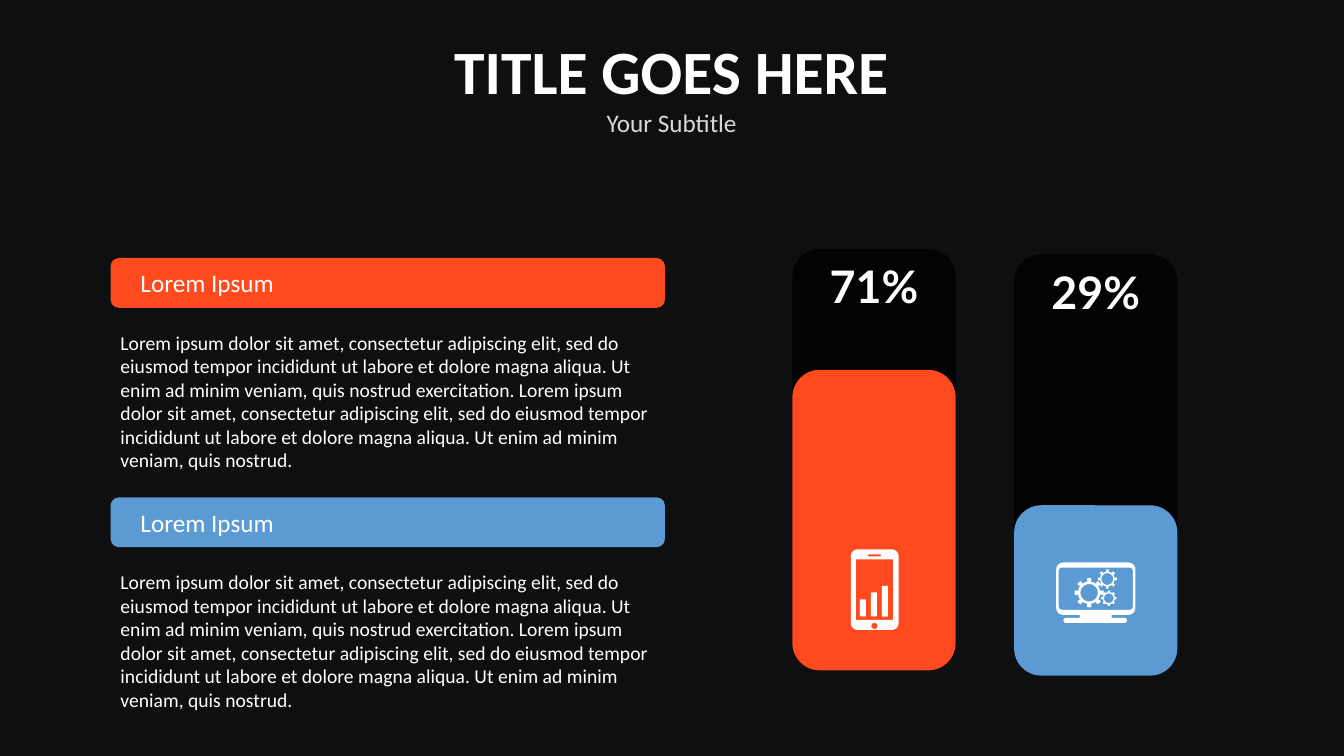
"""Build a dark slide with two text sections and two percentage columns."""
from dataclasses import dataclass
from math import cos, pi, sin

from lxml.etree import SubElement
from pptx import Presentation
from pptx.dml.color import RGBColor
from pptx.enum.shapes import MSO_SHAPE
from pptx.enum.text import MSO_AUTO_SIZE, PP_ALIGN
from pptx.oxml.ns import qn
from pptx.shapes.autoshape import Shape
from pptx.slide import Slide
from pptx.util import Pt

Contour = list[tuple[float, float]]


@dataclass(frozen=True)
class Theme:
    """Colours, fonts and type sizes."""
    back: str = "0E0F11"
    white: str = "FFFFFF"
    grey: str = "D9D9D9"
    track: str = "000000"
    orange: str = "FE4A1E"
    blue: str = "5C9AD3"
    font: str = "Calibri"
    figure_font: str = "Lato"
    title: int = 44
    figure: int = 32
    heading: int = 18
    body: int = 14
    track_alpha: int = 75


@dataclass(frozen=True)
class Box:
    """A rectangle in points."""
    x: float
    y: float
    w: float
    h: float


@dataclass(frozen=True)
class Line:
    """One formatted paragraph."""
    text: str
    size: int
    color: str
    font: str
    bold: bool = False
    align: PP_ALIGN = PP_ALIGN.LEFT


@dataclass(frozen=True)
class Section:
    """A coloured heading with body text."""
    heading: str
    body: str
    color: str


@dataclass(frozen=True)
class Column:
    """A percentage column."""
    label: str
    x: float
    y: float
    level: float
    color: str


@dataclass(frozen=True)
class Gear:
    """A cogwheel by centre and radii."""
    x: float
    y: float
    outer: float
    root: float
    hole: float


T = Theme()
LOREM = ("Lorem ipsum dolor sit amet, consectetur adipiscing elit, sed do eiusmod tempor "
         "incididunt ut labore et dolore magna aliqua. Ut enim ad minim veniam, quis nostrud")
BODY = f"{LOREM} exercitation. {LOREM}."
SECTIONS = [Section("Lorem Ipsum", BODY, color) for color in (T.orange, T.blue)]
SECTION_TOP, SECTION_STEP = 184.3, 171
COLUMNS = [Column("71%", 566, 177.8, 214.6, T.orange),
           Column("29%", 724.4, 181.6, 121.7, T.blue)]
COLUMN_W, COLUMN_H = 116.6, 301
GEARS = [Gear(778, 423.4, 10.4, 8, 6.2), Gear(791, 413.6, 6.8, 5.2, 4.2),
         Gear(792, 427.3, 5.4, 4.4, 3.4)]
CHART_BARS = [12.2, 17.3, 21.9]


def paint(sp: Shape, color: str, alpha: int = 100) -> None:
    """Fill a shape without line or shadow."""
    sp.shadow.inherit = False
    sp.line.fill.background()
    sp.fill.solid()
    sp.fill.fore_color.rgb = RGBColor.from_string(color)
    if alpha < 100:
        clr = sp.fill._xPr.find(f".//{qn('a:srgbClr')}")
        SubElement(clr, qn("a:alpha"), val=str(alpha * 1000))


def add_block(s: Slide, kind: MSO_SHAPE, box: Box, color: str, alpha: int = 100) -> None:
    """Add a filled preset shape."""
    sp = s.shapes.add_shape(kind, Pt(box.x), Pt(box.y), Pt(box.w), Pt(box.h))
    paint(sp, color, alpha)


def add_text(s: Slide, box: Box, lines: list[Line]) -> None:
    """Add a wrapped text box."""
    tf = s.shapes.add_textbox(Pt(box.x), Pt(box.y), Pt(box.w), Pt(box.h)).text_frame
    tf.word_wrap = True
    tf.auto_size = MSO_AUTO_SIZE.SHAPE_TO_FIT_TEXT
    for i, line in enumerate(lines):
        p = tf.add_paragraph() if i else tf.paragraphs[0]
        p.alignment = line.align
        r = p.add_run()
        r.text = line.text
        formats = {"name": line.font, "size": Pt(line.size), "bold": line.bold}
        for key, value in formats.items():
            setattr(r.font, key, value)
        r.font.color.rgb = RGBColor.from_string(line.color)


def arc(x: float, y: float, radius: float, start: float, sweep: float, steps: int) -> Contour:
    """Return points along a circular arc."""
    angles = [start + sweep * i / steps for i in range(steps + 1)]
    return [(x + radius * cos(a), y + radius * sin(a)) for a in angles]


def rounded(box: Box, radius: float = 0) -> Contour:
    """Return a rectangle outline with rounded corners."""
    left, right = box.x + radius, box.x + box.w - radius
    top, bottom = box.y + radius, box.y + box.h - radius
    corners = [(right, bottom), (left, bottom), (left, top), (right, top)]
    return [pt for i, (x, y) in enumerate(corners)
            for pt in arc(x, y, radius, i * pi / 2, pi / 2, 6)]


def cogwheel(gear: Gear, teeth: int = 8) -> list[Contour]:
    """Return the toothed rim and the round hole of a gear."""
    pitch = 2 * pi / teeth
    rim = [pt for i in range(teeth)
           for radius, shift in ((gear.outer, -0.2), (gear.root, 0.2))
           for pt in arc(gear.x, gear.y, radius, (i + shift) * pitch,
                         pitch * (0.4 if shift < 0 else 0.6), 4)]
    return [rim, arc(gear.x, gear.y, gear.hole, 0, 2 * pi, 32)]


def add_outline(s: Slide, contours: list[Contour]) -> None:
    """Add a white freeform made of several contours."""
    first, *rest = [[(Pt(x), Pt(y)) for x, y in c] for c in contours]
    fb = s.shapes.build_freeform(*first[0])
    fb.add_line_segments(first[1:])
    for contour in rest:
        fb.move_to(*contour[0])
        fb.add_line_segments(contour[1:])
    paint(fb.convert_to_shape(), T.white)


def add_phone(s: Slide) -> None:
    """Draw the phone with its bar chart."""
    add_outline(s, [rounded(Box(607.7, 392.4, 34.2, 57.6), 5),
                    rounded(Box(611.3, 399.6, 26.6, 43.2)),
                    rounded(Box(619.9, 396, 9.4, 1.4), 0.7),
                    rounded(Box(622.4, 444.9, 4.4, 4.4), 2.2)])
    for i, h in enumerate(CHART_BARS):
        add_block(s, MSO_SHAPE.RECTANGLE, Box(614.2 + 7.9 * i, 440.4 - h, 4.3, h), T.white)


def add_monitor(s: Slide) -> None:
    """Draw the monitor with its gears."""
    add_outline(s, [rounded(Box(754.4, 401.8, 56.6, 37.4), 5),
                    rounded(Box(756.2, 405.4, 53, 30.2), 2.5),
                    rounded(Box(771.1, 439.2, 23, 2.2)),
                    rounded(Box(759.6, 441.4, 45.4, 3.6), 1.8)])
    for gear in GEARS:
        add_outline(s, cogwheel(gear))


def add_section(s: Slide, section: Section, y: float) -> None:
    """Draw a heading bar and its body text."""
    add_block(s, MSO_SHAPE.ROUNDED_RECTANGLE, Box(79, y, 396, 35.6), section.color)
    add_text(s, Box(93.3, y + 3.2, 208.8, 29), [Line(section.heading, T.heading, T.white, T.font)])
    add_text(s, Box(79, y + 48.3, 396, 108.7), [Line(section.body, T.body, T.white, T.font)])


def add_column(s: Slide, col: Column) -> None:
    """Draw a column track, its level and its label."""
    kind = MSO_SHAPE.ROUNDED_RECTANGLE
    add_block(s, kind, Box(col.x, col.y, COLUMN_W, COLUMN_H), T.track, T.track_alpha)
    add_block(s, kind, Box(col.x, col.y + COLUMN_H - col.level, COLUMN_W, col.level), col.color)
    add_text(s, Box(col.x, col.y + 3.8, COLUMN_W, 46),
             [Line(col.label, T.figure, T.white, T.figure_font, True, PP_ALIGN.CENTER)])


def main() -> None:
    """Build and save the slide."""
    prs = Presentation()
    prs.slide_width, prs.slide_height = Pt(960), Pt(540)
    s = prs.slides.add_slide(prs.slide_layouts[6])
    s.background.fill.solid()
    s.background.fill.fore_color.rgb = RGBColor.from_string(T.back)
    add_text(s, Box(263, 20.2, 433.4, 82),
             [Line("TITLE GOES HERE", T.title, T.white, T.font, True, PP_ALIGN.CENTER),
              Line("Your Subtitle", T.heading, T.grey, T.font, False, PP_ALIGN.CENTER)])
    for i, section in enumerate(SECTIONS):
        add_section(s, section, SECTION_TOP + SECTION_STEP * i)
    for col in COLUMNS:
        add_column(s, col)
    add_phone(s)
    add_monitor(s)
    prs.save("out.pptx")


if __name__ == "__main__":
    main()
